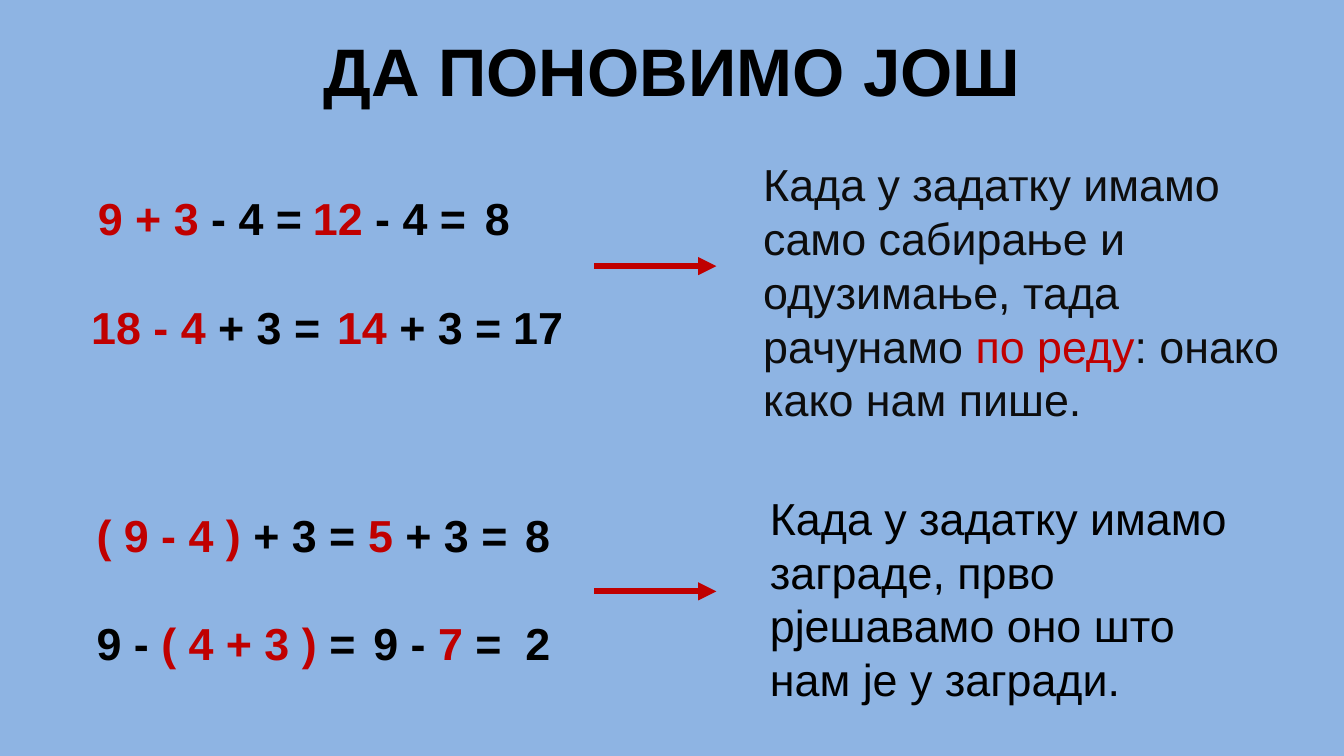
from lxml.etree import SubElement
from pptx import Presentation
from pptx.dml.color import RGBColor
from pptx.enum.shapes import MSO_CONNECTOR
from pptx.enum.text import MSO_ANCHOR, MSO_AUTO_SIZE, PP_ALIGN
from pptx.oxml.ns import qn
from pptx.util import Inches, Pt

BACKGROUND = RGBColor(0x8E, 0xB4, 0xE3)
RED = RGBColor(0xC0, 0x00, 0x00)
BLACK = RGBColor(0x00, 0x00, 0x00)
DARK = RGBColor(0x0D, 0x0D, 0x0D)
ROW_HEIGHT = 0.5


def fill_text(shape, runs, size, bold):
    """Write (text, colour) runs into the shape's first paragraph."""
    frame = shape.text_frame
    frame.word_wrap = True
    frame.auto_size = MSO_AUTO_SIZE.SHAPE_TO_FIT_TEXT
    frame.vertical_anchor = MSO_ANCHOR.TOP
    paragraph = frame.paragraphs[0]
    paragraph.font.name = "Arial"
    paragraph.font.size = Pt(size)
    paragraph.font.bold = bold
    for text, colour in runs:
        run = paragraph.add_run()
        run.text = text
        run.font.color.rgb = colour
    return paragraph


# A 16:9 slide on a plain background
presentation = Presentation()
presentation.slide_width = Inches(10)
presentation.slide_height = presentation.slide_width * 9 // 16
slide = presentation.slides.add_slide(presentation.slide_layouts[5])
slide.background.fill.solid()
slide.background.fill.fore_color.rgb = BACKGROUND

# Title, centred on the slide
title = slide.shapes.title
title.left, title.top = Inches(2.29), Inches(0.17)
title.width, title.height = Inches(5.42), Inches(0.71)
title_paragraph = fill_text(title, [("ДА ПОНОВИМО ЈОШ", BLACK)], 36, True)
title_paragraph.alignment = PP_ALIGN.CENTER

# Worked examples: row top, then (left, width, runs) for each step
examples = [
    (1.37, [
        (0.63, 1.75, [("9 + 3 ", RED), ("- 4 =", BLACK)]),
        (2.23, 1.42, [("12 ", RED), ("- 4 =", BLACK)]),
        (3.51, 0.61, [("8", BLACK)]),
    ]),
    (2.18, [
        (0.58, 2.02, [("18 - 4 ", RED), ("+ 3 =", BLACK)]),
        (2.41, 1.53, [("14", RED), (" + 3 =", BLACK)]),
        (3.72, 0.61, [("17", BLACK)]),
    ]),
    (3.73, [
        (0.62, 2.14, [("( 9 - 4 ) ", RED), ("+ 3 =", BLACK)]),
        (2.64, 1.25, [("5", RED), (" + 3 =", BLACK)]),
        (3.81, 0.43, [("8", BLACK)]),
    ]),
    (4.53, [
        (0.62, 2.22, [("9 - ", BLACK), ("( 4 + 3 ) ", RED), ("=", BLACK)]),
        (2.68, 1.25, [("9 - ", BLACK), ("7 ", RED), ("=", BLACK)]),
        (3.81, 0.61, [("2", BLACK)]),
    ]),
]
for top, steps in examples:
    for left, width, runs in steps:
        step = slide.shapes.add_textbox(
            Inches(left), Inches(top), Inches(width), Inches(ROW_HEIGHT))
        fill_text(step, runs, 24, True)

# Rules explaining each pair of examples
rules = [
    (5.58, 1.12, 4.25, 2.12, [
        ("Када у задатку имамо само сабирање и одузимање, тада рачунамо ", DARK),
        ("по реду", RED),
        (": онако како нам пише.", DARK),
    ]),
    (5.63, 3.6, 3.75, 1.72, [
        ("Када у задатку имамо заграде, прво рјешавамо оно што нам је у загради.", BLACK),
    ]),
]
for left, top, width, height, runs in rules:
    rule = slide.shapes.add_textbox(
        Inches(left), Inches(top), Inches(width), Inches(height))
    fill_text(rule, runs, 24, False)

# Arrows from the examples to their rule
for y in (1.98, 4.4):
    arrow = slide.shapes.add_connector(
        MSO_CONNECTOR.STRAIGHT, Inches(4.42), Inches(y), Inches(5.33), Inches(y))
    arrow.line.color.rgb = RED
    arrow.line.width = Pt(3.25)
    properties = arrow._element.spPr
    SubElement(properties.find(qn("a:ln")), qn("a:tailEnd"), type="triangle")
    SubElement(properties, qn("a:effectLst"))

presentation.save("out.pptx")
